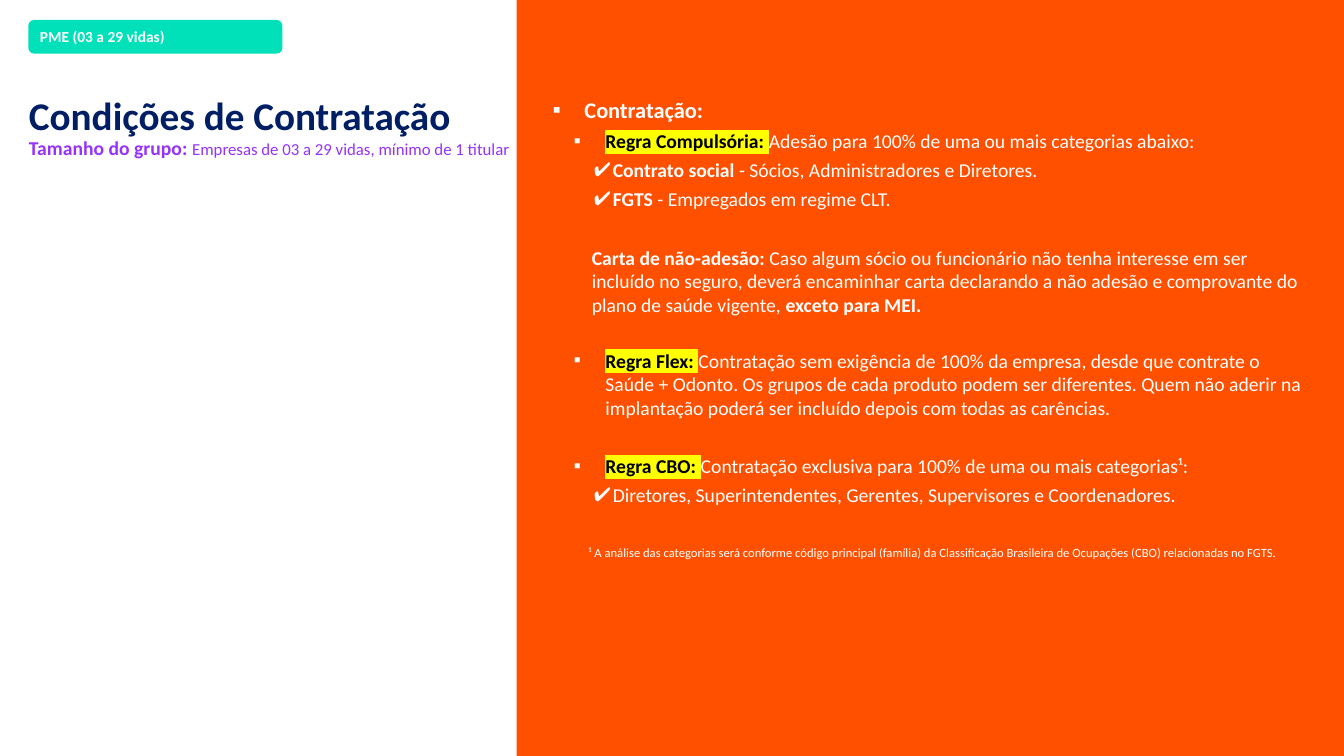
from dataclasses import dataclass

import lxml.etree
import pptx
import pptx.dml.color
import pptx.enum.shapes
import pptx.enum.text
import pptx.oxml.ns
import pptx.util

RGB = pptx.dml.color.RGBColor
ORANGE = RGB(0xFF, 0x50, 0x00)
TEAL = RGB(0x00, 0xE1, 0xB9)
NAVY = RGB(0x00, 0x1E, 0x64)
PURPLE = RGB(0x96, 0x32, 0xFA)
WHITE = RGB(0xFF, 0xFF, 0xFF)
BLACK = RGB(0x00, 0x00, 0x00)
YELLOW = RGB(0xFF, 0xFF, 0x00)

FONT = "Calibri"
EMU_PER_PX = 9525
SLIDE_W, SLIDE_H = 1280, 720
PANEL_LEFT = 492


@dataclass(frozen=True)
class Span:
    text: str
    bold: bool = False
    size: int = 14
    color: RGB = WHITE
    highlight: RGB | None = None


@dataclass(frozen=True)
class Style:
    level: int
    left: int
    hanging: int = 0
    bullet: str = ""


@dataclass(frozen=True)
class Item:
    style: Style
    spans: tuple[Span, ...]
    before: int = 4


HEADING = Style(0, 30, 30, "▪")
RULE = Style(1, 50, 30, "▪")
CHECK = Style(2, 57, 18, "✔")
NOTE = Style(1, 37)


def rule_name(text: str) -> Span:
    return Span(text + " ", True, color=BLACK, highlight=YELLOW)


TITLE = (
    Span("Condições de Contratação", True, 28, NAVY),
    Span("Tamanho do grupo: ", True, 14, PURPLE),
    Span("Empresas de 03 a 29 vidas, mínimo de 1 titular", False, 12, PURPLE),
)

ITEMS = (
    Item(HEADING, (Span("Contratação:", True, 16),), before=0),
    Item(RULE, (
        rule_name("Regra Compulsória:"),
        Span("Adesão para 100% de uma ou mais categorias abaixo:"),
    )),
    Item(CHECK, (
        Span("Contrato social", True),
        Span(" - Sócios, Administradores e Diretores."),
    )),
    Item(CHECK, (Span("FGTS", True), Span(" - Empregados em regime CLT."))),
    Item(NOTE, (
        Span("Carta de não-adesão:", True),
        Span(" Caso algum sócio ou funcionário não tenha interesse em ser incluído no seguro, "
             "deverá encaminhar carta declarando a não adesão e comprovante do plano de saúde "
             "vigente, "),
        Span("exceto para MEI.", True),
    ), before=25),
    Item(RULE, (
        rule_name("Regra Flex:"),
        Span("Contratação sem exigência de 100% da empresa, desde que contrate o Saúde + Odonto. "
             "Os grupos de cada produto podem ser diferentes. Quem não aderir na implantação "
             "poderá ser incluído depois com todas as carências."),
    ), before=23),
    Item(RULE, (
        rule_name("Regra CBO:"),
        Span("Contratação exclusiva para 100% de uma ou mais categorias¹:"),
    ), before=25),
    Item(CHECK, (
        Span("Diretores, Superintendentes, Gerentes, Supervisores e Coordenadores."),
    )),
)

FOOTNOTE = Span(
    "¹ A análise das categorias será conforme código principal (família) da Classificação "
    "Brasileira de Ocupações (CBO) relacionadas no FGTS.", size=9)


def px(n: int) -> pptx.util.Emu:
    return pptx.util.Emu(n * EMU_PER_PX)


def add_element(parent, tag: str, **attributes: str):
    return lxml.etree.SubElement(parent, pptx.oxml.ns.qn(tag), **attributes)


def add_spans(p, spans: tuple[Span, ...]) -> None:
    for span in spans:
        r = p.add_run()
        r.text = span.text
        r.font.name = FONT
        r.font.size = pptx.util.Pt(span.size)
        r.font.bold = span.bold
        r.font.color.rgb = span.color
        if span.highlight is not None:
            rPr = r.font._element
            highlight = add_element(rPr, "a:highlight")
            add_element(highlight, "a:srgbClr", val=str(span.highlight))
            rPr.find(pptx.oxml.ns.qn("a:solidFill")).addnext(highlight)


def set_style(p, style: Style) -> None:
    """Set the level, indents and bullet of a list paragraph."""
    p.level = style.level
    pPr = p._p.get_or_add_pPr()
    pPr.set("marL", str(px(style.left)))
    pPr.set("indent", str(-px(style.hanging)))
    if style.bullet:
        add_element(add_element(pPr, "a:buClr"), "a:srgbClr", val=str(WHITE))
        add_element(pPr, "a:buFont", typeface=FONT)
        add_element(pPr, "a:buChar", char=style.bullet)
    else:
        add_element(pPr, "a:buNone")


def place(shape, left: int, top: int, width: int, height: int) -> None:
    shape.left, shape.top = px(left), px(top)
    shape.width, shape.height = px(width), px(height)


def prepare_frame(shape):
    """Return the text frame, wrapped, top-anchored and of fixed size."""
    tf = shape.text_frame
    tf.word_wrap = True
    tf.auto_size = pptx.enum.text.MSO_AUTO_SIZE.NONE
    tf.vertical_anchor = pptx.enum.text.MSO_ANCHOR.TOP
    return tf


def add_block(s, kind, color: RGB, left: int, top: int, width: int, height: int):
    sp = s.shapes.add_shape(kind, px(left), px(top), px(width), px(height))
    sp.shadow.inherit = False
    sp.fill.solid()
    sp.fill.fore_color.rgb = color
    sp.line.fill.background()
    return sp


def fill_title(title) -> None:
    place(title, 18, 87, 533, 80)
    tf = prepare_frame(title)
    for p, spans in ((tf.paragraphs[0], TITLE[:1]), (tf.add_paragraph(), TITLE[1:])):
        p.alignment = pptx.enum.text.PP_ALIGN.LEFT
        p.line_spacing = 0.9
        add_spans(p, spans)


def fill_rules(body) -> None:
    place(body, 517, 87, 737, 408)
    tf = prepare_frame(body)
    for i, item in enumerate(ITEMS):
        p = tf.add_paragraph() if i else tf.paragraphs[0]
        set_style(p, item.style)
        p.space_before = pptx.util.Pt(item.before)
        add_spans(p, item.spans)


def main() -> None:
    prs = pptx.Presentation()
    prs.slide_width, prs.slide_height = px(SLIDE_W), px(SLIDE_H)
    s = prs.slides.add_slide(prs.slide_layouts[1])
    title, body = s.placeholders
    shapes = pptx.enum.shapes.MSO_SHAPE

    panel = add_block(s, shapes.RECTANGLE, ORANGE, PANEL_LEFT, 0, SLIDE_W - PANEL_LEFT, SLIDE_H)
    title.element.addprevious(panel.element)
    fill_title(title)
    fill_rules(body)

    footnote = s.shapes.add_textbox(px(551), px(514), px(722), px(24))
    add_spans(prepare_frame(footnote).paragraphs[0], (FOOTNOTE,))

    tag = add_block(s, shapes.ROUNDED_RECTANGLE, TEAL, 27, 19, 242, 32)
    p = tag.text_frame.paragraphs[0]
    p.alignment = pptx.enum.text.PP_ALIGN.LEFT
    add_spans(p, (Span("PME (03 a 29 vidas)", True, 11),))

    prs.save("out.pptx")


if __name__ == "__main__":
    main()
